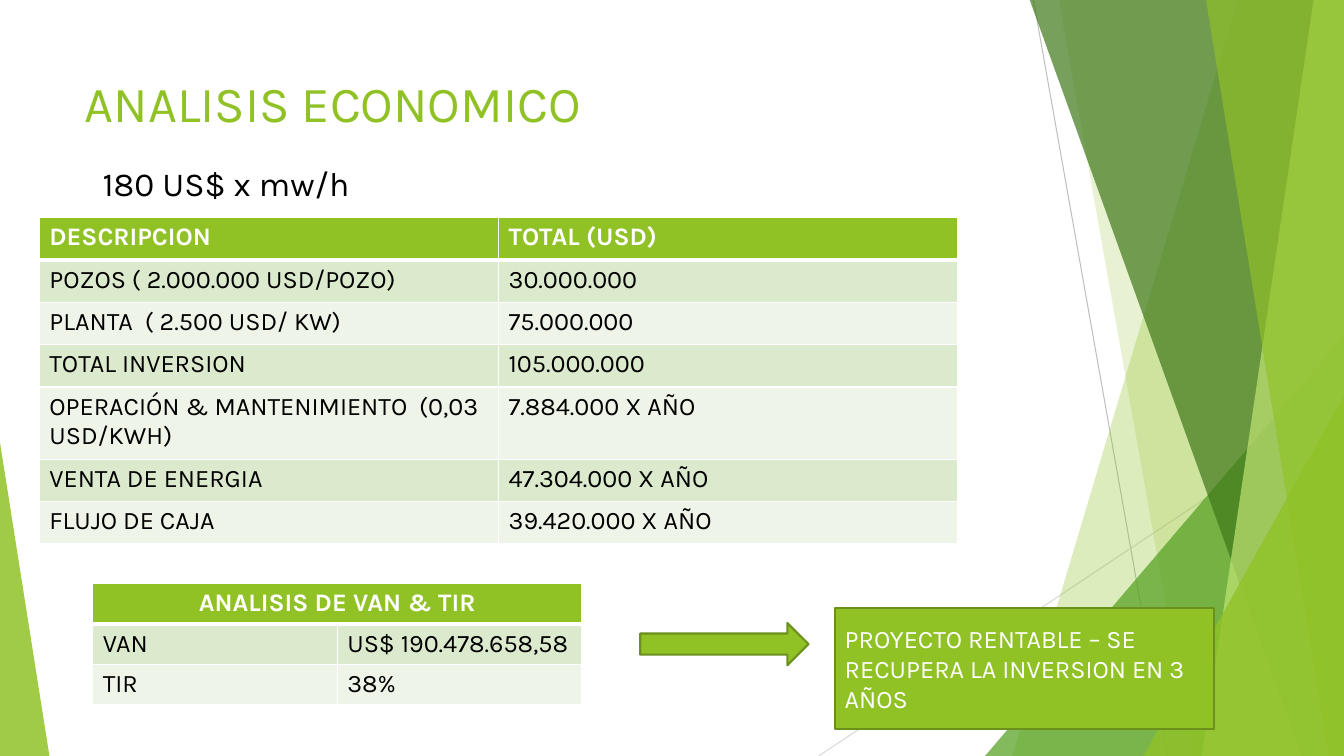
"""Builds the economic analysis slide with its cost and NPV tables."""
from dataclasses import dataclass
from typing import Any, Optional, Union

from lxml.etree import SubElement
from pptx import Presentation
from pptx.dml.color import RGBColor
from pptx.enum.shapes import MSO_CONNECTOR, MSO_SHAPE
from pptx.enum.text import MSO_ANCHOR, PP_ALIGN
from pptx.oxml.ns import qn
from pptx.util import Inches, Pt


@dataclass(frozen=True)
class Theme:
    font: str = "Karla"
    accent: str = "90C226"
    accent_line: str = "6B901C"
    green: str = "54A021"
    dark_green: str = "3F7819"
    light_green: str = "C0E474"
    bands: tuple[str, str] = ("DBE9CD", "EEF4E8")
    white: str = "FFFFFF"
    black: str = "000000"
    grey: str = "BFBFBF"
    light_grey: str = "D9D9D9"
    title: int = 36
    subtitle: int = 24
    body: int = 18


@dataclass(frozen=True)
class Box:
    left: float
    top: float
    width: float
    height: float

    def emu(self) -> tuple[int, ...]:
        return tuple(Inches(v) for v in (self.left, self.top, self.width, self.height))


@dataclass(frozen=True)
class Ray:
    start: tuple[float, float]
    end: tuple[float, float]
    color: str


@dataclass(frozen=True)
class Panel:
    top_x: float
    bottom_x: float
    color: str
    alpha: int


@dataclass(frozen=True)
class Wedge:
    box: Box
    apex: int
    color: str
    alpha: int


@dataclass(frozen=True)
class Grid:
    box: Box
    header: tuple[str, ...]
    rows: tuple[tuple[str, str], ...]
    heights: tuple[float, ...]


T = Theme()
WIDTH, HEIGHT, BLEED = 13.33, 7.5, -0.01

RAYS = (
    Ray((10.25, 0), (11.58, HEIGHT), T.grey),
    Ray((WIDTH, 4.03), (8.12, HEIGHT), T.light_grey),
)
FACETS: tuple[Union[Panel, Wedge], ...] = (
    Panel(12.28, 10.04, T.accent, 30),
    Panel(10.5, 11.83, T.accent, 20),
    Wedge(Box(9.77, 3.33, 3.56, 4.17), 1, T.green, 72),
    Panel(10.21, 12.91, T.dark_green, 70),
    Panel(13.03, 11.92, T.light_green, 70),
    Panel(11.96, 13.18, T.accent, 65),
    Wedge(Box(11.34, 3.93, 1.99, 3.57), 1, T.accent, 80),
    Wedge(Box(0, 4.39, 0.49, 3.11), 0, T.accent, 85),
)
COSTS = Grid(
    Box(0.39, 2.16, 9.11, 3.22),
    ("DESCRIPCION", "TOTAL (USD)"),
    (
        ("POZOS ( 2.000.000 USD/POZO)", "30.000.000"),
        ("PLANTA  ( 2.500 USD/ KW)", "75.000.000"),
        ("TOTAL INVERSION", "105.000.000"),
        ("OPERACIÓN & MANTENIMIENTO  (0,03 USD/KWH)", "7.884.000 X AÑO"),
        ("VENTA DE ENERGIA", "47.304.000 X AÑO"),
        ("FLUJO DE CAJA", "39.420.000 X AÑO"),
    ),
    (0.42, 0.42, 0.42, 0.42, 0.72, 0.42, 0.42),
)
RETURNS = Grid(
    Box(0.92, 5.79, 4.85, 1.2),
    ("ANALISIS DE VAN & TIR",),
    (("VAN", "US$ 190.478.658,58"), ("TIR", "38%")),
    (0.39, 0.39, 0.39),
)


def rgb(color: str) -> RGBColor:
    return RGBColor.from_string(color)


def write(tf: Any, text: str, size: int, color: str, bold: bool = False,
          **paragraph_format: Any) -> None:
    p = tf.paragraphs[0]
    for name, value in paragraph_format.items():
        setattr(p, name, value)
    r = p.add_run()
    r.text = text
    for name, value in {"name": T.font, "size": Pt(size), "bold": bold}.items():
        setattr(r.font, name, value)
    r.font.color.rgb = rgb(color)


def paint(sp: Any, color: str, alpha: int = 100, line: Optional[str] = None) -> None:
    sp.shadow.inherit = False
    sp.fill.solid()
    sp.fill.fore_color.rgb = rgb(color)
    if alpha < 100:
        clr = sp.fill._xPr.find(qn("a:solidFill"))[0]
        SubElement(clr, qn("a:alpha"), val=str(alpha * 1000))
    if line:
        sp.line.color.rgb = rgb(line)
        sp.line.width = Pt(1.5)
    else:
        sp.line.fill.background()


def draw_ray(s: Any, ray: Ray) -> None:
    ends = (Inches(v) for v in ray.start + ray.end)
    line = s.shapes.add_connector(MSO_CONNECTOR.STRAIGHT, *ends)
    line.line.color.rgb = rgb(ray.color)
    line.line.width = Pt(0.75)
    SubElement(line._element.spPr, qn("a:effectLst"))


def draw_facet(s: Any, facet: Union[Panel, Wedge]) -> None:
    if isinstance(facet, Panel):
        corners = ((WIDTH, BLEED), (WIDTH, HEIGHT), (facet.bottom_x, HEIGHT))
        builder = s.shapes.build_freeform(Inches(facet.top_x), Inches(BLEED))
        builder.add_line_segments([(Inches(x), Inches(y)) for x, y in corners], close=True)
        sp = builder.convert_to_shape()
    else:
        sp = s.shapes.add_shape(MSO_SHAPE.ISOSCELES_TRIANGLE, *facet.box.emu())
        sp.adjustments[0] = facet.apex
    paint(sp, facet.color, facet.alpha)


def style_cell(cell: Any, fill: str, bottom: int, top: int) -> None:
    tc_pr = cell._tc.get_or_add_tcPr()
    for side, width in {"L": 1, "R": 1, "T": top, "B": bottom}.items():
        ln = SubElement(tc_pr, qn(f"a:ln{side}"), w=str(Pt(width)))
        solid = SubElement(ln, qn("a:solidFill"))
        SubElement(solid, qn("a:srgbClr"), val=T.white)
    cell.fill.solid()
    cell.fill.fore_color.rgb = rgb(fill)


def draw_grid(s: Any, grid: Grid) -> None:
    table = s.shapes.add_table(len(grid.rows) + 1, 2, *grid.box.emu()).table
    for column in table.columns:
        column.width = Inches(grid.box.width / 2)
    for row, height in zip(table.rows, grid.heights):
        row.height = Inches(height)
    merged = len(grid.header) == 1
    if merged:
        table.cell(0, 0).merge(table.cell(0, 1))
    for i, texts in enumerate((grid.header, *grid.rows)):
        head = i == 0
        fill = T.accent if head else T.bands[(i - 1) % 2]
        for j in range(2):
            style_cell(table.cell(i, j), fill, 3 if head else 1, 3 if i == 1 else 1)
        for j, text in enumerate(texts):
            align = PP_ALIGN.CENTER if head and merged else PP_ALIGN.LEFT
            write(table.cell(i, j).text_frame, text, T.body,
                  T.white if head else T.black, head, alignment=align)


def draw_title(s: Any, text: str, box: Box) -> None:
    title = s.shapes.title
    for name, value in zip(("left", "top", "width", "height"), box.emu()):
        setattr(title, name, value)
    title.text_frame.vertical_anchor = MSO_ANCHOR.TOP
    write(title.text_frame, text, T.title, T.accent, alignment=PP_ALIGN.LEFT)


def draw_price(s: Any, text: str, box: Box) -> None:
    tf = s.shapes.add_textbox(*box.emu()).text_frame
    for name, value in {"word_wrap": True, "vertical_anchor": MSO_ANCHOR.MIDDLE}.items():
        setattr(tf, name, value)
    write(tf, text, T.subtitle, T.black, line_spacing=0.9)


def draw_conclusion(s: Any, text: str, arrow_box: Box, box: Box) -> None:
    arrow = s.shapes.add_shape(MSO_SHAPE.RIGHT_ARROW, *arrow_box.emu())
    sp = s.shapes.add_shape(MSO_SHAPE.RECTANGLE, *box.emu())
    for shape in (arrow, sp):
        paint(shape, T.accent, line=T.accent_line)
    sp.text_frame.word_wrap = True
    sp.text_frame.vertical_anchor = MSO_ANCHOR.MIDDLE
    write(sp.text_frame, text, T.body, T.white, alignment=PP_ALIGN.LEFT)


def main() -> None:
    prs = Presentation()
    prs.slide_width, prs.slide_height = Inches(WIDTH), Inches(HEIGHT)
    s = prs.slides.add_slide(prs.slide_layouts[5])
    for ray in RAYS:
        draw_ray(s, ray)
    for facet in FACETS:
        draw_facet(s, facet)
    draw_title(s, "ANALISIS ECONOMICO", Box(0.74, 0.67, 9.4, 1.44))
    draw_grid(s, COSTS)
    draw_price(s, "180 US$ x mw/h", Box(0.92, 1.12, 11.5, 1.45))
    draw_grid(s, RETURNS)
    draw_conclusion(s, "PROYECTO RENTABLE – SE RECUPERA LA INVERSION EN 3 AÑOS",
                    Box(6.35, 6.18, 1.67, 0.42), Box(8.28, 6.03, 3.76, 1.2))
    prs.save("out.pptx")


if __name__ == "__main__":
    main()
